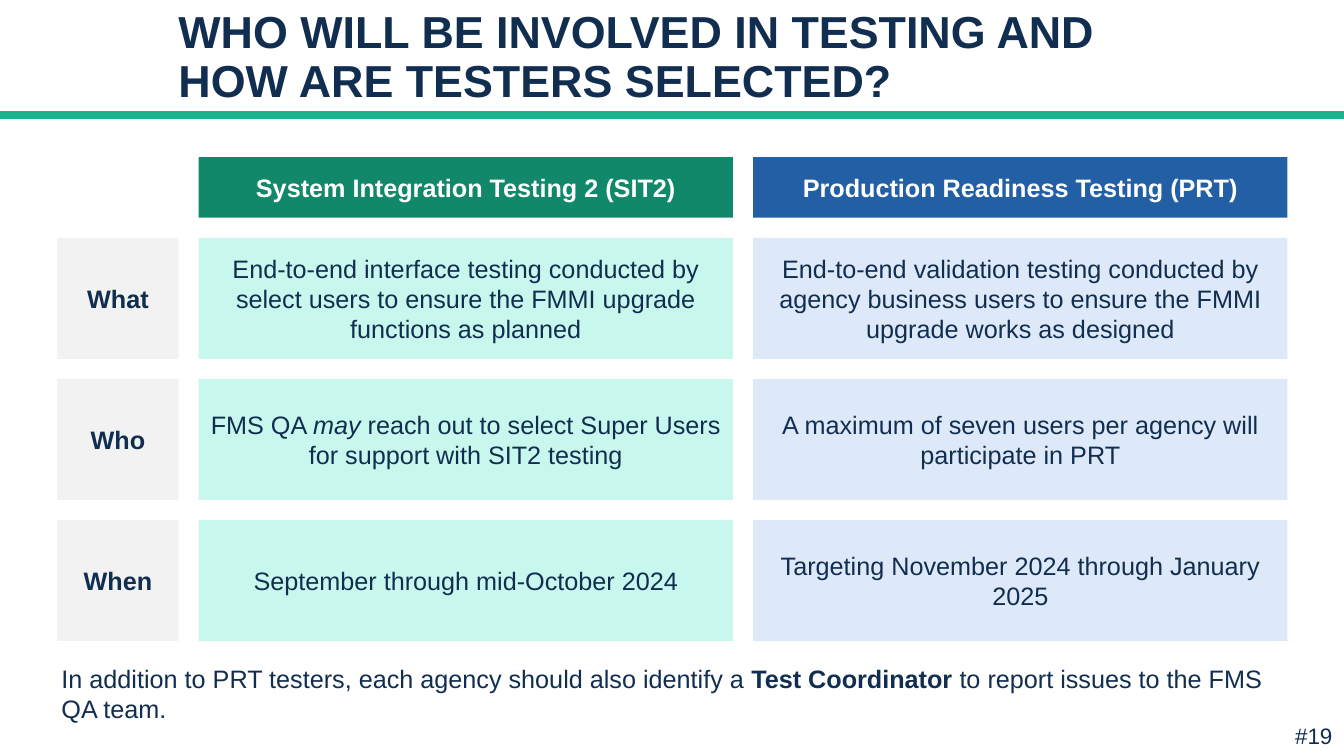
from lxml import etree
from pptx import Presentation
from pptx.dml.color import RGBColor
from pptx.enum.shapes import MSO_CONNECTOR as CONN, MSO_SHAPE as SHAPE
from pptx.enum.text import MSO_ANCHOR as ANCHOR, MSO_AUTO_SIZE as AUTO, PP_ALIGN as ALIGN
from pptx.oxml.ns import qn
from pptx.util import Inches, Pt

NAVY, WHITE = "112E50", "FFFFFF"


def rgb(value):
    return RGBColor.from_string(value)


def write(tf, runs, size=18, color=NAVY, align=ALIGN.CENTER, anchor=ANCHOR.MIDDLE, inset=0.1):
    tf.word_wrap = True
    tf.auto_size = AUTO.NONE
    tf.vertical_anchor = anchor
    tf.margin_left = tf.margin_right = tf.margin_top = tf.margin_bottom = Inches(inset)
    p = tf.paragraphs[0]
    p.alignment = align
    for text, style in runs:
        r = p.add_run()
        r.text = text
        r.font.name = "Arial"
        r.font.size = Pt(size)
        r.font.color.rgb = rgb(color)
        r.font.bold = style == "bold"
        r.font.italic = style == "italic"
    return p


prs = Presentation()
prs.slide_width, prs.slide_height = Inches(13.33), Inches(7.5)
s = prs.slides.add_slide(prs.slide_layouts[5])

rule = s.shapes.add_connector(CONN.STRAIGHT, 0, Inches(1.14), prs.slide_width, Inches(1.14))
rule.line.color.rgb = rgb("16B58E")
rule.line.width = Pt(6)
etree.SubElement(rule._element.spPr, qn("a:effectLst"))

title = s.shapes.title
title.left, title.top, title.width, title.height = map(Inches, (1.67, 0.35, 10, 0.76))
p = write(title.text_frame, [("WHO WILL BE INVOLVED IN TESTING AND HOW ARE TESTERS SELECTED?", "bold")],
          size=32, align=ALIGN.LEFT, anchor=ANCHOR.BOTTOM)
title.text_frame.margin_top = title.text_frame.margin_bottom = Inches(0.05)
p.line_spacing = 0.9

GAP = 0.2
col_widths = [1.2, 5.3, 5.3]
row_heights = [0.6, 1.2, 1.2, 1.2]
head_fills = [None, "11886A", "235FA5"]
body_fills = ["F2F2F2", "C8F8ED", "DDE9F8"]
grid = [
    [None,
     [("System Integration Testing 2 (SIT2)", "bold")],
     [("Production Readiness Testing (PRT)", "bold")]],
    [[("What", "bold")],
     [("End-to-end interface testing conducted by select users to ensure the FMMI upgrade "
       "functions as planned", "")],
     [("End-to-end validation testing conducted by agency business users to ensure the FMMI "
       "upgrade works as designed", "")]],
    [[("Who", "bold")],
     [("FMS QA ", ""), ("may", "italic"),
      (" reach out to select Super Users for support with SIT2 testing", "")],
     [("A maximum of seven users per agency will participate in PRT", "")]],
    [[("When", "bold")],
     [("September through mid-October 2024", "")],
     [("Targeting November 2024 through January 2025", "")]],
]

y = 1.56
for i, (row, h) in enumerate(zip(grid, row_heights)):
    x = 0.57
    fills = body_fills if i else head_fills
    for runs, w, fill in zip(row, col_widths, fills):
        if runs:
            sp = s.shapes.add_shape(SHAPE.RECTANGLE, Inches(x), Inches(y), Inches(w), Inches(h))
            sp.shadow.inherit = False
            sp.fill.solid()
            sp.fill.fore_color.rgb = rgb(fill)
            sp.line.fill.background()
            write(sp.text_frame, runs, color=NAVY if i else WHITE)
        x += w + GAP
    y += h + GAP

note = s.shapes.add_textbox(Inches(0.61), Inches(6.58), Inches(12), Inches(0.6))
write(note.text_frame, [
    ("In addition to PRT testers, each agency should also identify a ", ""),
    ("Test Coordinator ", "bold"),
    ("to report issues to the FMS QA team.", ""),
], align=ALIGN.LEFT, anchor=ANCHOR.TOP, inset=0)

number = s.shapes.add_textbox(Inches(12.73), Inches(7.11), Inches(0.6), Inches(0.37))
write(number.text_frame, [("#19", "")], size=16, inset=0.05)

prs.save("out.pptx")
